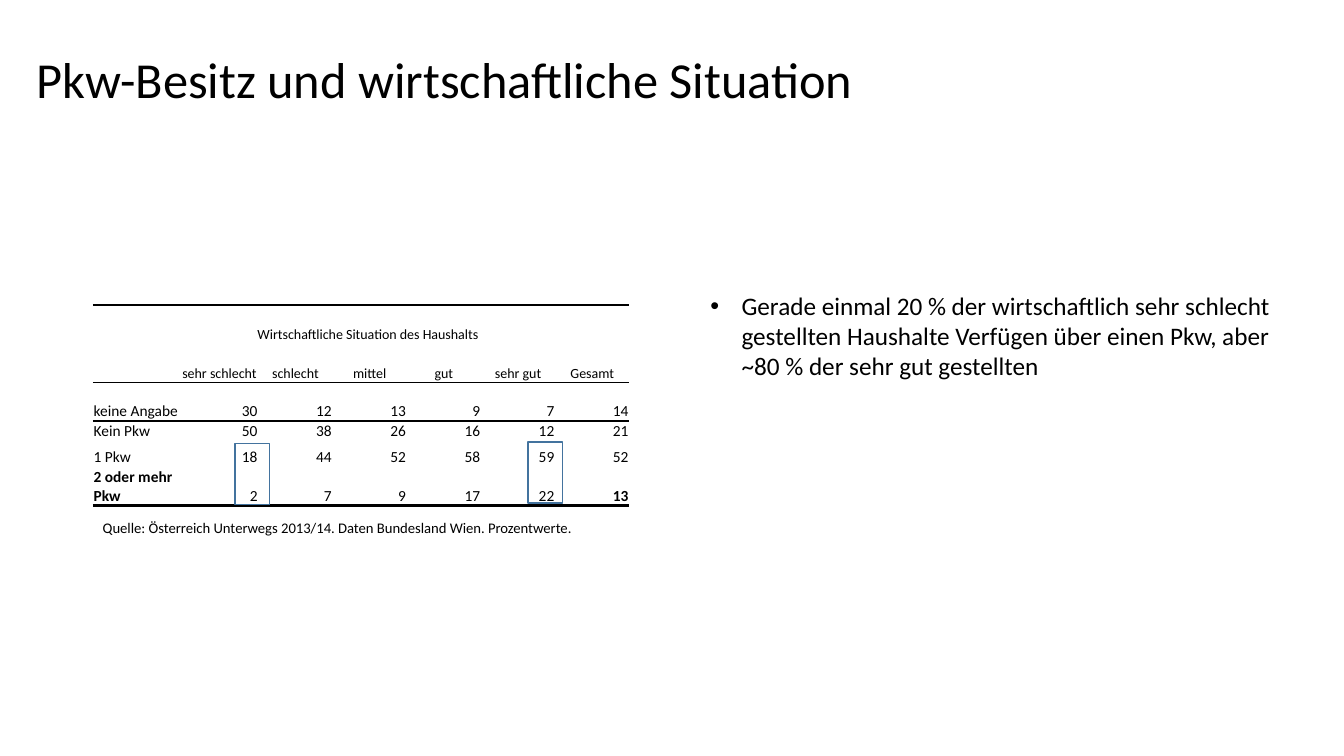
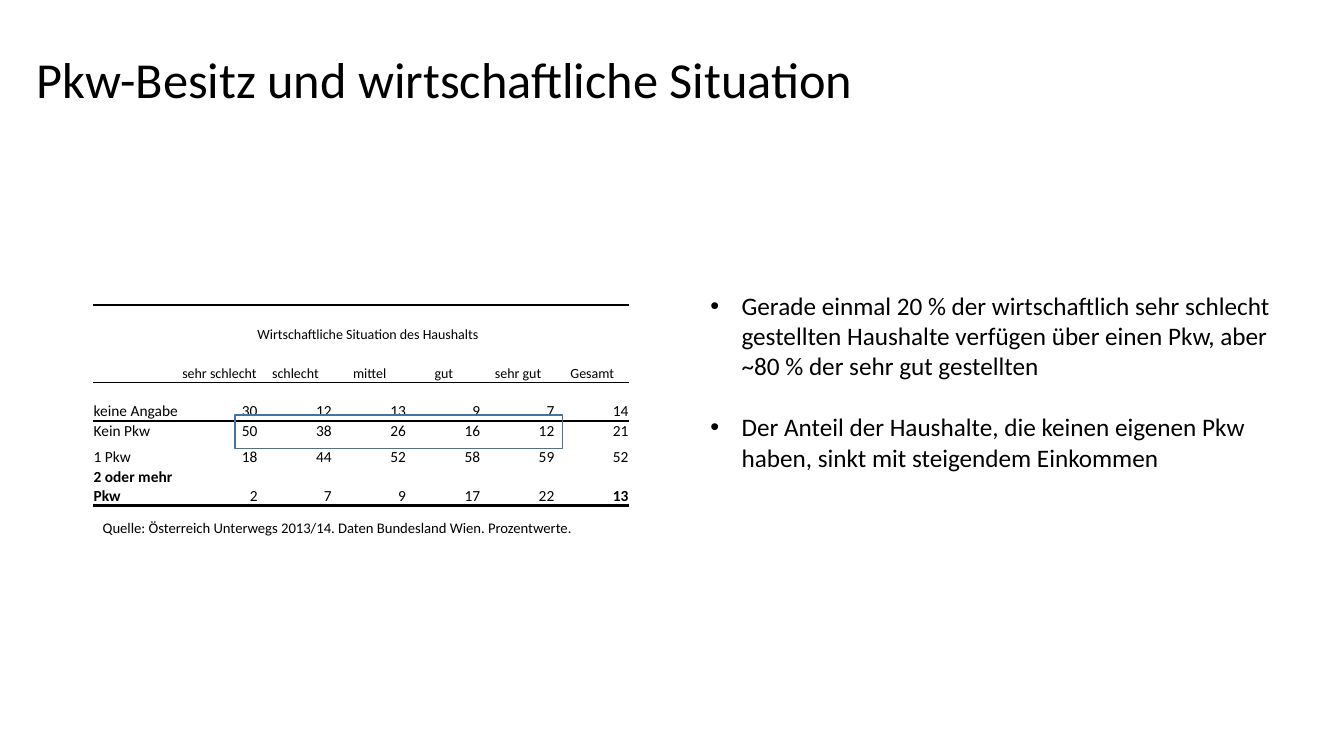
from typing import NamedTuple

from lxml.etree import SubElement
from pptx import Presentation
from pptx.dml.color import RGBColor
from pptx.enum.shapes import MSO_SHAPE as Shape
from pptx.enum.text import MSO_ANCHOR as Anchor, PP_ALIGN as Align
from pptx.oxml.ns import qn
from pptx.util import Cm, Pt

# Shared style
COLORS = {"text": "000000", "paper": "FFFFFF", "frame": "43739E"}
FONT = "Calibri"
TITLE = "Pkw-Besitz und wirtschaftliche Situation"
SOURCE = "Quelle: Österreich Unterwegs 2013/14. Daten Bundesland Wien. Prozentwerte."

# Table content and grid (lengths in cm, rule widths in points)
TABLE_LEFT, TABLE_TOP = 2.34, 7.69
COLUMN_WIDTHS = [2.21, 1.96] + [1.87] * 5
ROW_HEIGHTS = [0.97, 0.97, 0.97, 0.5, 0.66, 0.98]
RULES = {0: 2, 2: 1, 3: 1.5, 6: 2}  # horizontal edge -> width
HEADER_ROWS = 2
BOLD_CELLS = {(5, 0), (5, 6)}
ROWS = [
    ["", "Wirtschaftliche Situation des Haushalts", "", "", "", "", "Gesamt"],
    ["", "sehr schlecht", "schlecht", "mittel", "gut", "sehr gut", ""],
    ["keine Angabe", "30", "12", "13", "9", "7", "14"],
    ["Kein Pkw", "50", "38", "26", "16", "12", "21"],
    ["1 Pkw", "18", "44", "52", "58", "59", "52"],
    ["2 oder mehr Pkw", "2", "7", "9", "17", "22", "13"],
]


class Area(NamedTuple):
    left: float
    top: float
    width: float
    height: float

    def lengths(self) -> list:
        return [Cm(value) for value in self]


class Page(NamedTuple):
    frames: list
    bullets: list


TITLE_AREA = Area(0.67, 0.24, 29.21, 3.68)
SOURCE_AREA = Area(2.34, 12.95, 12.5, 0.71)

PAGES = [
    Page(
        [Area(5.92, 11.18, 0.87, 1.54), Area(13.31, 11.14, 0.87, 1.54)],
        ["Gerade einmal 20 % der wirtschaftlich sehr schlecht gestellten Haushalte "
         "Verfügen über einen Pkw, aber ~80 % der sehr gut gestellten"],
    ),
    Page(
        [Area(5.92, 10.46, 8.26, 0.84)],
        ["Gerade einmal 20 % der wirtschaftlich sehr schlecht gestellten Haushalte "
         "verfügen über einen Pkw, aber ~80 % der sehr gut gestellten",
         "Der Anteil der Haushalte, die keinen eigenen Pkw haben, sinkt mit "
         "steigendem Einkommen"],
    ),
]


def color(name: str) -> RGBColor:
    return RGBColor.from_string(COLORS[name])


def style(para, size: float, bold: bool = False) -> None:
    for span in para.runs:
        span.font.name = FONT
        span.font.size = Pt(size)
        span.font.bold = bold
        span.font.color.rgb = color("text")


def add_text(slide, area: Area, texts: list, size: float, wrap: bool = True):
    frame = slide.shapes.add_textbox(*area.lengths()).text_frame
    frame.word_wrap = wrap
    frame.text = "\n".join(texts)
    for para in frame.paragraphs:
        style(para, size)
    return frame


def add_bullets(slide, texts: list) -> None:
    height = 3.33 if len(texts) == 1 else 4.88
    frame = add_text(slide, Area(17.65, 7.19, 15.11, height), texts, 18)
    for para in frame.paragraphs:
        properties = para._p.get_or_add_pPr()
        properties.set("marL", str(Cm(0.79)))
        properties.set("indent", str(-Cm(0.79)))
        if para is not frame.paragraphs[-1] and len(texts) > 1:
            para.space_after = Pt(22)
        SubElement(properties, qn("a:buFont"), typeface="Arial")
        SubElement(properties, qn("a:buChar"), char="•")
    frame.paragraphs[-1].space_after = Pt(0)


def set_borders(cell, top: float, bottom: float) -> None:
    properties = cell._tc.get_or_add_tcPr()
    widths = {"a:lnL": 0, "a:lnR": 0, "a:lnT": top, "a:lnB": bottom}
    for position, (tag, width) in enumerate(widths.items()):
        line = SubElement(properties, qn(tag), w=str(Pt(width)))
        if width:
            fill = SubElement(line, qn("a:solidFill"))
            SubElement(fill, qn("a:srgbClr"), val=COLORS["text"])
        else:
            SubElement(line, qn("a:noFill"))
        properties.insert(position, line)


def fill_cell(cell, row: int, column: int) -> None:
    cell.text = ROWS[row][column]
    cell.vertical_anchor = Anchor.BOTTOM
    cell.margin_left = cell.margin_right = cell.margin_top = Cm(0.02)
    cell.margin_bottom = 0
    cell.fill.solid()
    cell.fill.fore_color.rgb = color("paper")
    para = cell.text_frame.paragraphs[0]
    header = row < HEADER_ROWS
    if header:
        para.alignment = Align.CENTER
    else:
        para.alignment = Align.RIGHT if column else Align.LEFT
    style(para, 10 if header else 11, (row, column) in BOLD_CELLS)
    last_row = row + cell.span_height if cell.is_merge_origin else row + 1
    set_borders(cell, RULES.get(row, 0), RULES.get(last_row, 0))


def add_car_table(slide) -> None:
    area = Area(TABLE_LEFT, TABLE_TOP, sum(COLUMN_WIDTHS), sum(ROW_HEIGHTS))
    table = slide.shapes.add_table(
        len(ROW_HEIGHTS), len(COLUMN_WIDTHS), *area.lengths()).table
    table.first_row = table.horz_banding = False
    for column, width in zip(table.columns, COLUMN_WIDTHS):
        column.width = Cm(width)
    for row, height in zip(table.rows, ROW_HEIGHTS):
        row.height = Cm(height)
    table.cell(0, 1).merge(table.cell(0, 5))
    table.cell(0, 6).merge(table.cell(1, 6))
    for row in range(len(ROW_HEIGHTS)):
        for column in range(len(COLUMN_WIDTHS)):
            fill_cell(table.cell(row, column), row, column)


def add_frame(slide, area: Area) -> None:
    box = slide.shapes.add_shape(Shape.RECTANGLE, *area.lengths())
    box.shadow.inherit = False
    box.fill.background()
    box.line.color.rgb = color("frame")
    box.line.width = Pt(1)


def add_page(deck, page: Page) -> None:
    slide = deck.slides.add_slide(deck.slide_layouts[6])
    # Title
    title = add_text(slide, TITLE_AREA, [TITLE], 36)
    title.vertical_anchor = Anchor.MIDDLE
    title.paragraphs[0].line_spacing = 0.9
    # Table with source line and highlighted values
    add_car_table(slide)
    add_text(slide, SOURCE_AREA, [SOURCE], 10.5, wrap=False)
    for area in page.frames:
        add_frame(slide, area)
    # Findings
    add_bullets(slide, page.bullets)


def main() -> None:
    deck = Presentation()
    deck.slide_width, deck.slide_height = Cm(33.87), Cm(19.05)
    for page in PAGES:
        add_page(deck, page)
    deck.save("out.pptx")


if __name__ == "__main__":
    main()
